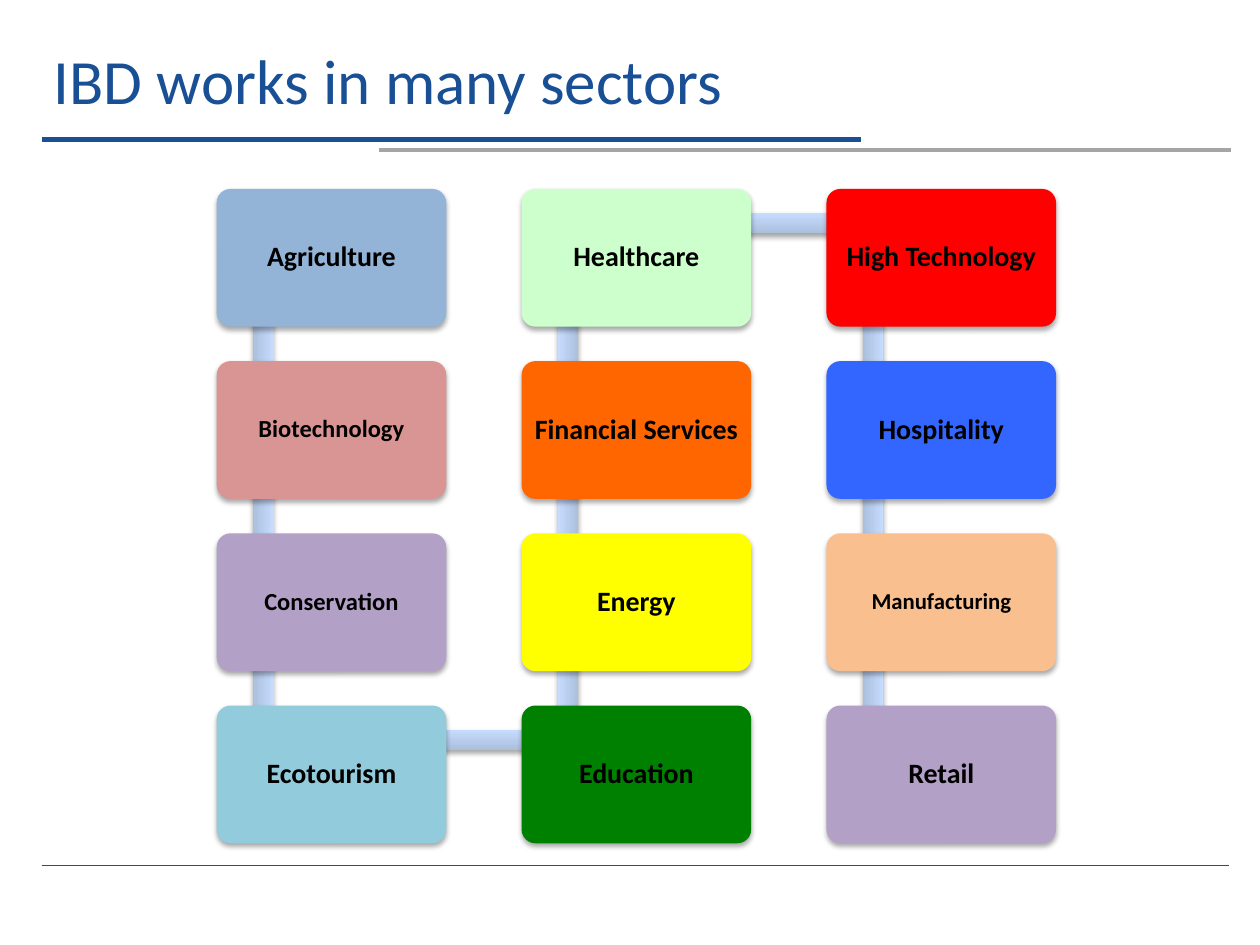
from lxml import etree
from pptx import Presentation
from pptx.dml.color import RGBColor
from pptx.enum.shapes import MSO_CONNECTOR, MSO_SHAPE
from pptx.enum.text import MSO_ANCHOR, PP_ALIGN
from pptx.oxml.ns import qn
from pptx.util import Pt

STRAIGHT = MSO_CONNECTOR.STRAIGHT
RECTANGLE = MSO_SHAPE.RECTANGLE
ROUNDED = MSO_SHAPE.ROUNDED_RECTANGLE
MIDDLE = MSO_ANCHOR.MIDDLE
LEFT, CENTER = PP_ALIGN.LEFT, PP_ALIGN.CENTER

NAVY = RGBColor(0x18, 0x4F, 0x95)
GRAY = RGBColor(0xA5, 0xA5, 0xA5)
BLACK = RGBColor(0x00, 0x00, 0x00)
BAR_DARK = RGBColor(0xAB, 0xBE, 0xDC)
BAR_LIGHT = RGBColor(0xC7, 0xDD, 0xFF)
STEEL = RGBColor(0x93, 0xB3, 0xD7)
ROSE = RGBColor(0xD9, 0x95, 0x93)
LILAC = RGBColor(0xB2, 0xA0, 0xC7)
AQUA = RGBColor(0x92, 0xCC, 0xDC)
GREEN = RGBColor(0x00, 0x80, 0x00)
YELLOW = RGBColor(0xFF, 0xFF, 0x00)
ORANGE = RGBColor(0xFF, 0x66, 0x00)
MINT = RGBColor(0xCC, 0xFF, 0xCC)
RED = RGBColor(0xFF, 0x00, 0x00)
BLUE = RGBColor(0x33, 0x66, 0xFF)
PEACH = RGBColor(0xFA, 0xBF, 0x8E)

RULES = [
    (23.76, 79.92, 491.76, NAVY, 3),
    (216.72, 85.68, 703.44, GRAY, 2.25),
    (23.76, 494.64, 702, NAVY, 1),
]
SECTORS = [
    ("Agriculture", STEEL, 16, 5),
    ("Biotechnology", ROSE, 14, 4.2),
    ("Conservation", LILAC, 14, 4.2),
    ("Ecotourism", AQUA, 16, 5),
    ("Education", GREEN, 16, 5),
    ("Energy", YELLOW, 16, 5),
    ("Financial Services", ORANGE, 16, 5),
    ("Healthcare", MINT, 16, 5),
    ("High Technology", RED, 16, 5),
    ("Hospitality", BLUE, 16, 5),
    ("Manufacturing", PEACH, 13, 3.9),
    ("Retail", LILAC, 16, 5),
]
ROWS = 4
GRID_LEFT, GRID_TOP = 123.84, 108
COLUMN_STEP, ROW_STEP = 174.24, 98.4
CARD_WIDTH, CARD_HEIGHT = 131.2, 78.7
LABEL_INSET = 2.3
BAR_THICKNESS = 11.8
BAR_OFFSET_X, BAR_OFFSET_Y = 26.6, 13.7
BAR_LENGTH, BAR_CENTER_Y = 98, 68.4


class SlideBuilder:
    """Draws styled elements on the current slide."""

    font = "Calibri"

    def __init__(self, slide):
        self.slide = slide

    def rule(self, left, top, right, color, weight):
        line = self.slide.shapes.add_connector(
            STRAIGHT, Pt(left), Pt(top), Pt(right), Pt(top))
        line.line.color.rgb = color
        line.line.width = Pt(weight)
        etree.SubElement(line._element.spPr, qn("a:effectLst"))

    def text(self, left, top, width, height, words, size, color,
             bold=False, align=LEFT, spacing=1.0, insets=(7.2, 3.6)):
        box = self.slide.shapes.add_textbox(
            Pt(left), Pt(top), Pt(width), Pt(height))
        frame = box.text_frame
        frame.word_wrap = True
        frame.vertical_anchor = MIDDLE
        frame.margin_left = frame.margin_right = Pt(insets[0])
        frame.margin_top = frame.margin_bottom = Pt(insets[1])
        para = frame.paragraphs[0]
        para.alignment = align
        para.line_spacing = spacing
        span = para.add_run()
        span.text = words
        span.font.name = self.font
        span.font.size = Pt(size)
        span.font.bold = bold
        span.font.color.rgb = color

    def shadowed_shape(self, preset, left, top, width, height):
        shape = self.slide.shapes.add_shape(
            preset, Pt(left), Pt(top), Pt(width), Pt(height))
        shape.line.fill.background()
        shape.shadow.inherit = False
        effects = shape._element.spPr.find(qn("a:effectLst"))
        shadow = etree.SubElement(
            effects, qn("a:outerShdw"), blurRad=str(Pt(3.1)),
            dist=str(Pt(1.8)), dir="5400000", rotWithShape="0")
        tint = etree.SubElement(shadow, qn("a:srgbClr"), val=str(BLACK))
        etree.SubElement(tint, qn("a:alpha"), val="35000")
        return shape

    def bar(self, left, top, length, rotation=0):
        shape = self.shadowed_shape(RECTANGLE, left, top, length, BAR_THICKNESS)
        shape.rotation = rotation
        shape.fill.gradient()
        shape.fill.gradient_angle = 90
        for stop, color, position in zip(
                shape.fill.gradient_stops, (BAR_DARK, BAR_LIGHT), (0, 1)):
            stop.color.rgb = color
            stop.position = position

    def card(self, left, top, words, color, size, inset):
        shape = self.shadowed_shape(ROUNDED, left, top, CARD_WIDTH, CARD_HEIGHT)
        shape.adjustments[0] = 0.1
        shape.fill.solid()
        shape.fill.fore_color.rgb = color
        self.text(left + LABEL_INSET, top + LABEL_INSET,
                  CARD_WIDTH - 2 * LABEL_INSET, CARD_HEIGHT - 2 * LABEL_INSET,
                  words, size, BLACK, True, CENTER, 0.9, (inset, inset))


def snake_cell(index):
    column, step = divmod(index, ROWS)
    return column, ROWS - 1 - step if column % 2 else step


def main():
    deck = Presentation()
    deck.slide_width, deck.slide_height = Pt(720), Pt(540)
    page = SlideBuilder(deck.slides.add_slide(deck.slide_layouts[6]))
    for rule in RULES:
        page.rule(*rule)
    page.text(23.76, 15.84, 660.24, 59.04, "IBD works in many sectors", 36, NAVY)

    for index, sector in enumerate(SECTORS):
        column, row = snake_cell(index)
        left = GRID_LEFT + column * COLUMN_STEP
        top = GRID_TOP + row * ROW_STEP
        if index < len(SECTORS) - 1:
            next_column, next_row = snake_cell(index + 1)
            if next_column > column:
                page.bar(left + BAR_OFFSET_X, top + BAR_OFFSET_Y, COLUMN_STEP)
            else:
                upper = GRID_TOP + min(row, next_row) * ROW_STEP
                page.bar(left + BAR_OFFSET_X - BAR_LENGTH / 2,
                         upper + BAR_CENTER_Y - BAR_THICKNESS / 2,
                         BAR_LENGTH, 90 if next_row > row else 270)
        page.card(left, top, *sector)
    deck.save("out.pptx")


if __name__ == "__main__":
    main()
